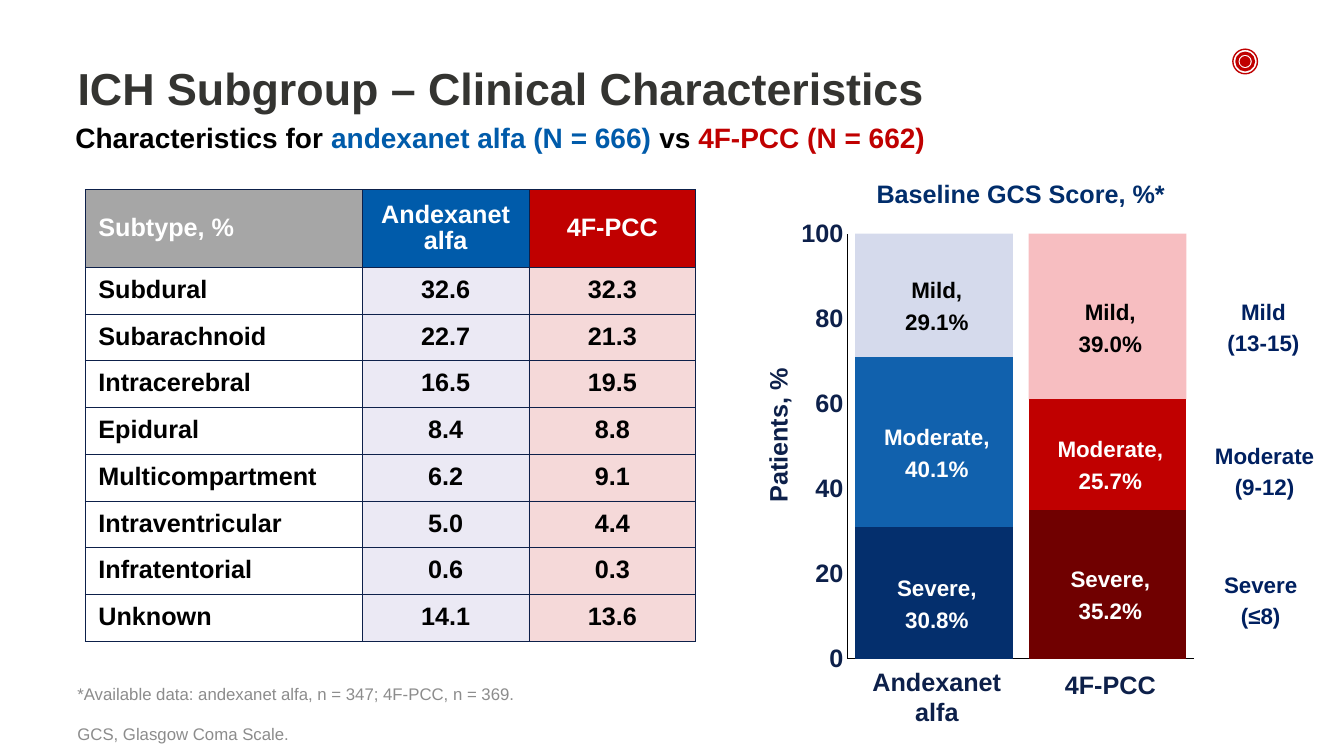
from collections import namedtuple

from lxml import etree
from pptx import Presentation
from pptx.chart.data import CategoryChartData
from pptx.dml.color import RGBColor
from pptx.enum.chart import XL_CHART_TYPE, XL_TICK_LABEL_POSITION, XL_TICK_MARK
from pptx.enum.shapes import MSO_SHAPE
from pptx.enum.text import MSO_ANCHOR, PP_ALIGN
from pptx.oxml.ns import qn
from pptx.util import Cm, Pt

LEFT, CENTER = PP_ALIGN.LEFT, PP_ALIGN.CENTER
TOP, MIDDLE, BOTTOM = MSO_ANCHOR.TOP, MSO_ANCHOR.MIDDLE, MSO_ANCHOR.BOTTOM
STACKED = XL_CHART_TYPE.COLUMN_STACKED
NO_LABELS, NO_TICKS = XL_TICK_LABEL_POSITION.NONE, XL_TICK_MARK.NONE
OVAL = MSO_SHAPE.OVAL
FONT = "Arial"
COLORS = {
    "title": "343431", "black": "000000", "white": "FFFFFF", "blue": "005BAA",
    "red": "C00000", "gray": "A6A6A6", "note": "8C8C8C", "navy": "0D204A",
    "heading": "012D6B", "range": "002060", "lilac": "D9D5EA",
    "severe_blue": "042F6D", "moderate_blue": "1161AD", "mild_blue": "CFD5EA",
    "severe_red": "700000", "mild_red": "E41922",
}
Box = namedtuple("Box", "left top width height")

SUBTYPES = [
    ("Subdural", "32.6", "32.3"),
    ("Subarachnoid", "22.7", "21.3"),
    ("Intracerebral", "16.5", "19.5"),
    ("Epidural", "8.4", "8.8"),
    ("Multicompartment", "6.2", "9.1"),
    ("Intraventricular", "5.0", "4.4"),
    ("Infratentorial", "0.6", "0.3"),
    ("Unknown", "14.1", "13.6"),
]
SCORES = [
    ("Severe", (30.8, 35.2), (("severe_blue", 100), ("severe_red", 100)), "white"),
    ("Moderate", (40.1, 25.7), (("moderate_blue", 100), ("red", 100)), "white"),
    ("Mild", (29.1, 39.0), (("mild_blue", 86), ("mild_red", 28)), "black"),
]
SCORE_RANGES = [
    ("Mild", "(13-15)", 13.4, 2.67),
    ("Moderate", "(9-12)", 13.43, 6.3),
    ("Severe", "(≤8)", 13.33, 9.55),
]
PLOT = Box(0.23, 0.03, 0.69, 0.85)


def rgb(name):
    return RGBColor.from_string(COLORS[name])


def paint(fill, color, opacity=100):
    fill.solid()
    fill.fore_color.rgb = rgb(color)
    if opacity < 100:
        color_element = fill._xPr.find(qn("a:solidFill"))[0]
        etree.SubElement(color_element, qn("a:alpha"), val=str(opacity * 1000))


def style_font(font, size, color, bold):
    font.name, font.size, font.bold = FONT, Pt(size), bold
    font.color.rgb = rgb(color)


def write(frame, lines, size=18, color="black", bold=True, align=CENTER, spacing=None, gap=0):
    for index, line in enumerate(lines):
        paragraph = frame.paragraphs[0] if index == 0 else frame.add_paragraph()
        paragraph.alignment = align
        if spacing:
            paragraph.line_spacing = Pt(spacing)
        if index and gap:
            paragraph.space_before = Pt(gap)
        for text, run_color in [(line, color)] if isinstance(line, str) else line:
            run = paragraph.add_run()
            run.text = text
            style_font(run.font, size, run_color, bold)


def add_text(slide, box, lines, anchor=TOP, **text_format):
    frame = slide.shapes.add_textbox(*map(Cm, box)).text_frame
    frame.word_wrap = True
    frame.vertical_anchor = anchor
    write(frame, lines, **text_format)


def add_header(slide, box):
    title = slide.shapes.title
    title.left, title.top, title.width, title.height = map(Cm, box)
    title.text_frame.vertical_anchor = MIDDLE
    write(title.text_frame, ["ICH Subgroup – Clinical Characteristics"], size=32, color="title", align=LEFT)
    subtitle = [
        ("Characteristics for ", "black"), ("andexanet alfa (N = 666) ", "blue"),
        ("vs ", "black"), ("4F-PCC (N = 662)", "red"),
    ]
    add_text(slide, Box(box.left - 0.05, box.top + 2.36, 22.07, 1.12), [subtitle], size=20, align=LEFT)


def add_target(slide, box):
    for diameter, width, filled in ((0.62, 1, False), (0.42, 2.25, False), (0.24, 1, True)):
        inset = (box.width - diameter) / 2
        ring = slide.shapes.add_shape(
            OVAL, Cm(box.left + inset), Cm(box.top + inset), Cm(diameter), Cm(diameter))
        ring.shadow.inherit = False
        ring.line.color.rgb = rgb("red")
        ring.line.width = Pt(width)
        if filled:
            paint(ring.fill, "red")
        else:
            ring.fill.background()


def add_borders(cell):
    properties = cell._tc.get_or_add_tcPr()
    for index, side in enumerate(("a:lnL", "a:lnR", "a:lnT", "a:lnB")):
        line = etree.Element(qn(side), w=str(Pt(0.5)))
        fill = etree.SubElement(line, qn("a:solidFill"))
        etree.SubElement(fill, qn("a:srgbClr"), val=COLORS["navy"])
        properties.insert(index, line)


def add_subtype_table(slide, box):
    rows = [("Subtype, %", "Andexanet alfa", "4F-PCC")] + SUBTYPES
    header_height = 1.95
    row_height = (box.height - header_height) / len(SUBTYPES)
    table = slide.shapes.add_table(len(rows), 3, *map(Cm, box)).table
    for column, width in zip(table.columns, (6.98, 4.2, 4.2)):
        column.width = Cm(width)
    header_fills = [("gray", 100), ("blue", 100), ("red", 100)]
    body_fills = [("white", 100), ("lilac", 50), ("red", 15)]
    for row_index, values in enumerate(rows):
        table.rows[row_index].height = Cm(row_height if row_index else header_height)
        fills = body_fills if row_index else header_fills
        for column_index, (value, fill) in enumerate(zip(values, fills)):
            cell = table.cell(row_index, column_index)
            cell.vertical_anchor = MIDDLE
            cell.margin_left = cell.margin_right = Cm(0.33)
            cell.margin_top = cell.margin_bottom = Cm(0.17)
            paint(cell.fill, *fill)
            add_borders(cell)
            write(cell.text_frame, [value], color="black" if row_index else "white",
                  align=CENTER if column_index else LEFT, spacing=19)


def set_layout(layout, **values):
    manual = etree.SubElement(layout, qn("c:manualLayout"))
    for name, value in values.items():
        etree.SubElement(manual, qn("c:" + name), val=str(value))


def add_score_chart(slide, box):
    data = CategoryChartData()
    data.categories = ["Andexanet alfa", "4F-PCC"]
    for name, values, _, _ in SCORES:
        data.add_series(name, [round(value) for value in values])
    chart = slide.shapes.add_chart(STACKED, *map(Cm, box), data).chart
    chart.has_legend = chart.has_title = False
    style_font(chart.font, 18, "navy", True)
    plot = chart.plots[0]
    plot.gap_width, plot.overlap, plot.vary_by_categories = 10, 100, False
    for series, (_, _, fills, _) in zip(plot.series, SCORES):
        paint(series.format.fill, *fills[0])
        for index, fill in enumerate(fills):
            paint(series.points[index].format.fill, *fill)
    for axis in (chart.category_axis, chart.value_axis):
        axis.has_major_gridlines = False
        axis.major_tick_mark = axis.minor_tick_mark = NO_TICKS
        axis.format.line.color.rgb = rgb("black")
        axis.format.line.width = Pt(0.75)
    chart.category_axis.tick_label_position = NO_LABELS
    axis = chart.value_axis
    axis.minimum_scale, axis.maximum_scale, axis.major_unit = 0, 100, 20
    style_font(axis.tick_labels.font, 18, "navy", True)
    frame = axis.axis_title.text_frame
    write(frame, ["Patients, %"], color="navy")
    frame._txBody.bodyPr.set("rot", "-5400000")
    frame._txBody.bodyPr.set("vert", "horz")
    title = axis.axis_title._element
    title_layout = title.find(qn("c:layout"))
    if title_layout is None:
        title_layout = etree.Element(qn("c:layout"))
        title.find(qn("c:tx")).addnext(title_layout)
    set_layout(title_layout, xMode="edge", yMode="edge", x=0.05, y=0.29)
    plot_area = chart._chartSpace.chart.plotArea
    plot_layout = plot_area.find(qn("c:layout"))
    if plot_layout is None:
        plot_layout = etree.Element(qn("c:layout"))
        plot_area.insert(0, plot_layout)
    set_layout(plot_layout, layoutTarget="inner", xMode="edge", yMode="edge",
               x=PLOT.left, y=PLOT.top, w=PLOT.width, h=PLOT.height)


def add_score_panel(slide, box):
    add_text(slide, Box(box.left + 1.39, box.top - 1.04, 11.79, 0.94),
             ["Baseline GCS Score, %*"], color="heading", spacing=18.7)
    add_score_chart(slide, box)
    plot_height = box.height * PLOT.height
    plot_bottom = box.top + box.height * PLOT.top + plot_height
    label_width, label_height, label_drop = 3.8, 1.83, 0.2
    arms = [(["Andexanet", "alfa"], None), (["4F-PCC"], 24)]
    for arm, (arm_lines, spacing) in enumerate(arms):
        center = box.left + box.width * (PLOT.left + PLOT.width * (2 * arm + 1) / 4) + 0.07
        left = center - label_width / 2
        below = 0
        for name, values, _, color in SCORES:
            middle = plot_bottom - plot_height * (below + values[arm] / 2) / 100 + label_drop
            add_text(slide, Box(left, middle - label_height / 2, label_width, label_height),
                     [f"{name},", f"{values[arm]}%"], MIDDLE, size=16, color=color, spacing=22.7)
            below += values[arm]
        add_text(slide, Box(left, plot_bottom + 0.07, label_width, 1.8),
                 arm_lines, color="navy", spacing=spacing)
    for name, score, center, middle in SCORE_RANGES:
        add_text(slide, Box(box.left + center - label_width / 2, box.top + middle - label_height / 2,
                            label_width, label_height),
                 [name, score], MIDDLE, size=16, color="range", spacing=22.7)


def add_footnotes(slide, box):
    notes = ["*Available data: andexanet alfa, n = 347; 4F-PCC, n = 369.", "GCS, Glasgow Coma Scale."]
    add_text(slide, box, notes, BOTTOM, size=12, color="note", bold=False, align=LEFT, gap=14.5)


def main():
    presentation = Presentation()
    presentation.slide_width, presentation.slide_height = Cm(33.87), Cm(19.05)
    slide = presentation.slides.add_slide(presentation.slide_layouts[5])
    add_header(slide, Box(1.7, 0.56, 29.85, 3.3))
    add_target(slide, Box(31.07, 1.24, 0.62, 0.62))
    add_subtype_table(slide, Box(2.15, 4.78, 15.38, 11.38))
    add_score_panel(slide, Box(18.44, 5.51, 12.67, 12.6))
    add_footnotes(slide, Box(1.7, 17.2, 29.85, 1.67))
    presentation.save("out.pptx")


if __name__ == "__main__":
    main()
